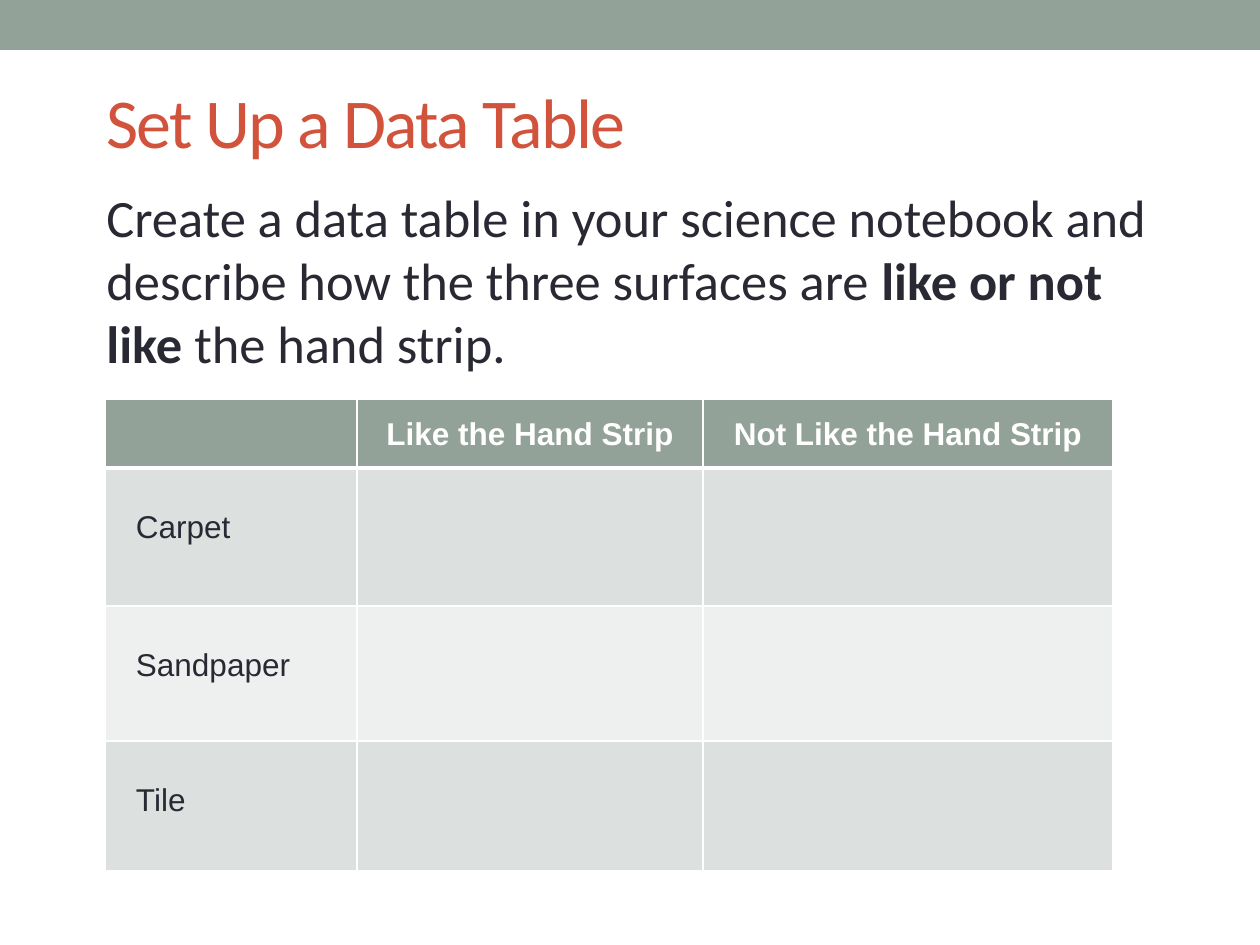
from dataclasses import dataclass

import pptx
import pptx.dml.color
import pptx.enum.shapes
import pptx.enum.text
import pptx.oxml
import pptx.oxml.ns
import pptx.util


@dataclass(frozen=True)
class Theme:
    sage: str = "93A299"
    band_dark: str = "DCE0DE"
    band_light: str = "EEF0EF"
    white: str = "FFFFFF"
    ink: str = "292934"
    accent: str = "D2533C"
    heading_font: str = "Calibri"
    table_font: str = "Arial"
    title_size: int = 40
    body_size: int = 30
    table_size: int = 18


THEME = Theme()
PX_PER_INCH = 126
ALIGN = pptx.enum.text.PP_ALIGN
ANCHOR = pptx.enum.text.MSO_ANCHOR


def px(n):
    return round(n * pptx.util.Inches(1) / PX_PER_INCH)


def rgb(color):
    return pptx.dml.color.RGBColor.from_string(color)


def write(p, text, font=THEME.heading_font, size=THEME.body_size,
          color=THEME.ink, bold=False, align=ALIGN.LEFT, spacing=0):
    p.alignment = align
    r = p.add_run()
    r.text = text
    r.font.name = font
    r.font.size = pptx.util.Pt(size)
    r.font.bold = bold
    r.font.color.rgb = rgb(color)
    if spacing:
        r._r.get_or_add_rPr().set("spc", str(spacing * 100))


def add_band(s, x, y, w, h, color):
    sp = s.shapes.add_shape(pptx.enum.shapes.MSO_SHAPE.RECTANGLE,
                            px(x), px(y), px(w), px(h))
    sp.shadow.inherit = False
    sp.fill.solid()
    sp.fill.fore_color.rgb = rgb(color)
    sp.line.fill.background()


def add_text(s, x, y, w, h, anchor=ANCHOR.TOP):
    tf = s.shapes.add_textbox(px(x), px(y), px(w), px(h)).text_frame
    tf.word_wrap = True
    tf.vertical_anchor = anchor
    return tf.paragraphs[0]


def set_borders(cell, bottom=1, top=1):
    tc_pr = cell._tc.get_or_add_tcPr()
    widths = {"lnL": 1, "lnR": 1, "lnT": top, "lnB": bottom}
    for i, (tag, width) in enumerate(widths.items()):
        tc_pr.insert(i, pptx.oxml.parse_xml(
            f'<a:{tag} {pptx.oxml.ns.nsdecls("a")} w="{pptx.util.Pt(width)}">'
            f'<a:solidFill><a:srgbClr val="{THEME.white}"/></a:solidFill>'
            f'</a:{tag}>'))


def format_cell(cell, text, row):
    header = row == 0
    band = THEME.band_dark if row % 2 else THEME.band_light
    cell.fill.solid()
    cell.fill.fore_color.rgb = rgb(THEME.sage if header else band)
    set_borders(cell, bottom=3 if header else 1, top=3 if row == 1 else 1)
    if not text:
        return
    cell.margin_top = px(18 if header else 42)
    if not header:
        cell.margin_left = px(31)
    write(cell.text_frame.paragraphs[0], text, font=THEME.table_font,
          size=THEME.table_size, bold=header,
          color=THEME.white if header else THEME.ink,
          align=ALIGN.CENTER if header else ALIGN.LEFT)


def add_grid(s, x, y, widths, heights, rows):
    table = s.shapes.add_table(len(heights), len(widths), px(x), px(y),
                               px(sum(widths)), px(sum(heights))).table
    for column, width in zip(table.columns, widths):
        column.width = px(width)
    for i, (height, texts) in enumerate(zip(heights, rows)):
        table.rows[i].height = px(height)
        for j, text in enumerate(texts):
            format_cell(table.cell(i, j), text, i)


def main():
    prs = pptx.Presentation()
    prs.slide_width, prs.slide_height = px(1260), px(945)
    s = prs.slides.add_slide(prs.slide_layouts[6])

    add_band(s, 0, 0, 1260, 50, THEME.sage)
    title = add_text(s, 94, 53, 1103, 136, anchor=ANCHOR.MIDDLE)
    write(title, "Set Up a Data Table", size=THEME.title_size,
          color=THEME.accent, spacing=-1)

    add_grid(s, 105, 399, [252, 346, 410], [69, 138, 135, 130], [
        ["", "Like the Hand Strip", "Not Like the Hand Strip"],
        ["Carpet", "", ""],
        ["Sandpaper", "", ""],
        ["Tile", "", ""],
    ])

    task = add_text(s, 94, 179, 1092, 204)
    write(task, "Create a data table in your science notebook and "
                "describe how the three surfaces are ")
    write(task, "like or not like", bold=True)
    write(task, " the hand strip.")

    prs.save("out.pptx")


if __name__ == "__main__":
    main()
